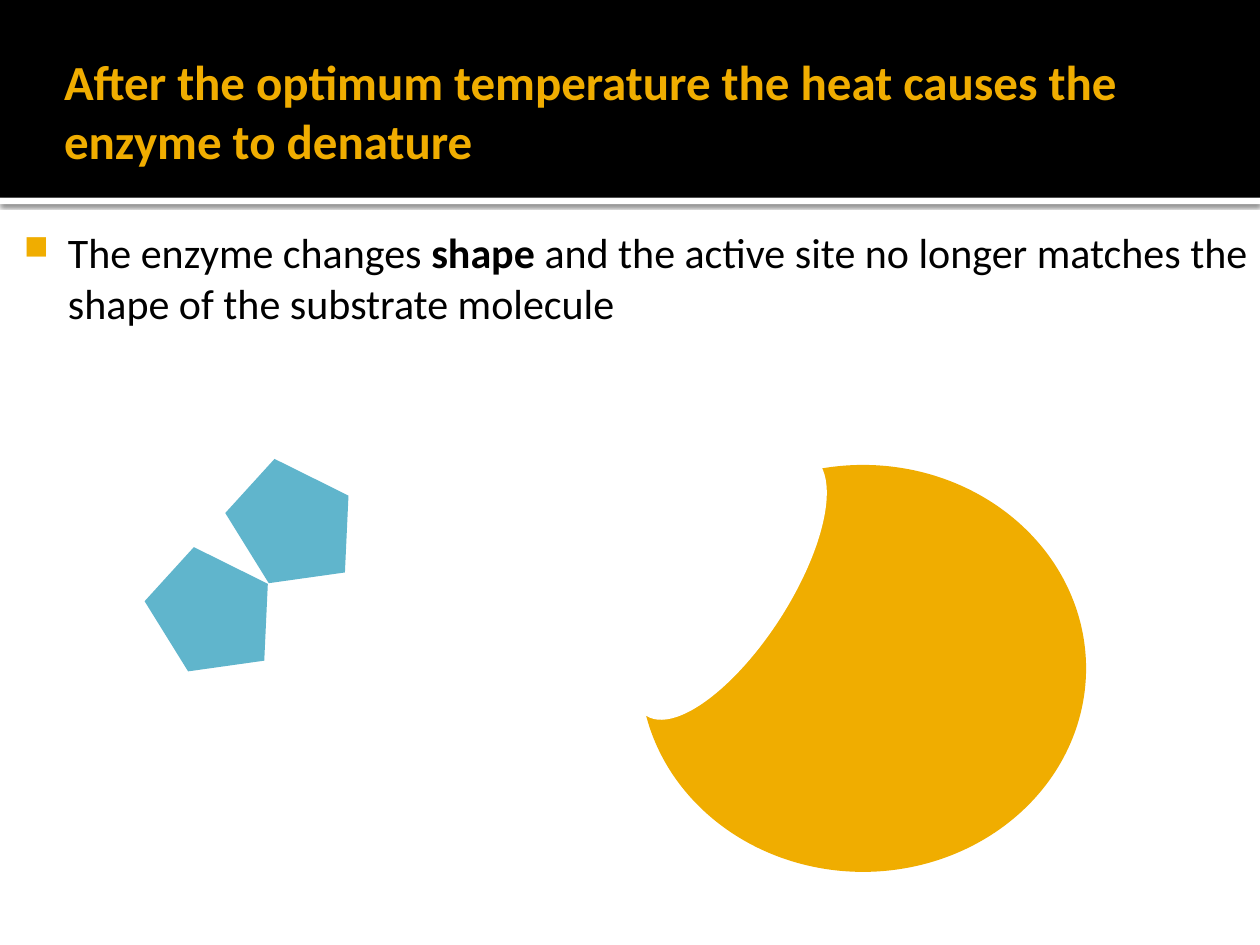
from lxml import etree
from pptx import Presentation
from pptx.dml.color import RGBColor
from pptx.enum.shapes import MSO_SHAPE as Shape
from pptx.enum.text import MSO_AUTO_SIZE as AutoSize
from pptx.oxml.ns import qn
from pptx.util import Inches, Pt

BLACK, WHITE, AMBER, BLUE = "000000", "FFFFFF", "F0AD00", "60B5CC"


def rgb(value):
    return RGBColor.from_string(value)


class SlideBuilder:
    font_name = "Calibri"

    def __init__(self, slide):
        self.slide = slide

    def shape(self, kind, left, top, width, height, color, rotation=0, parent=None):
        shapes = (parent or self.slide).shapes
        item = shapes.add_shape(kind, *map(Inches, (left, top, width, height)))
        item.shadow.inherit = False
        item.fill.solid()
        item.fill.fore_color.rgb = rgb(color)
        item.line.fill.background()
        item.rotation = rotation
        return item

    def pentagon_pair(self, left, top, color):
        """Two touching pentagons; left and top belong to the upper one."""
        pair = self.slide.shapes.add_group_shape()
        for step in range(2):
            self.shape(Shape.REGULAR_PENTAGON, left - 0.64 * step, top + 0.7 * step,
                       0.94, 1.02, color, 132.3, pair)

    def drop_shadow(self, item):
        effects = item._element.spPr.find(qn("a:effectLst"))
        shadow = etree.SubElement(effects, qn("a:outerShdw"), blurRad=str(Pt(2.5)),
                                  dist=str(Pt(0.8)), dir="5400000", rotWithShape="0")
        color = etree.SubElement(shadow, qn("a:srgbClr"), val=BLACK)
        etree.SubElement(color, qn("a:alpha"), val="60000")

    def text(self, left, top, width, height, runs, size, color,
             insets=(0.1, 0.05, 0.1, 0.05), auto_size=AutoSize.NONE):
        """Runs are (wording, bold) pairs of one paragraph."""
        box = self.slide.shapes.add_textbox(*map(Inches, (left, top, width, height)))
        frame = box.text_frame
        frame.word_wrap = True
        frame.auto_size = auto_size
        (frame.margin_left, frame.margin_top,
         frame.margin_right, frame.margin_bottom) = map(Inches, insets)
        paragraph = frame.paragraphs[0]
        paragraph.font.name = self.font_name
        paragraph.font.size = Pt(size)
        paragraph.font.color.rgb = rgb(color)
        for wording, bold in runs:
            run = paragraph.add_run()
            run.text = wording
            run.font.bold = bold
        return paragraph

    def bullet(self, paragraph, color):
        properties = paragraph._p.get_or_add_pPr()
        properties.set("marL", str(Inches(0.48)))
        properties.set("indent", str(Inches(-0.35)))
        marks = [etree.Element(qn("a:buClr")),
                 etree.Element(qn("a:buSzPct"), val="80000"),
                 etree.Element(qn("a:buChar"), char="■")]
        etree.SubElement(marks[0], qn("a:srgbClr"), val=color)
        for position, mark in enumerate(marks):
            properties.insert(position, mark)


def main():
    deck = Presentation()
    deck.slide_width, deck.slide_height = Inches(10), Inches(7.5)
    page = SlideBuilder(deck.slides.add_slide(deck.slide_layouts[6]))

    # Header band
    band_edge = page.shape(Shape.RECTANGLE, 0, 1.57, 10, 0.05, WHITE)
    page.drop_shadow(band_edge)
    page.shape(Shape.RECTANGLE, 0, 0, 10, 1.57, BLACK)

    # Enzyme with its original active site cut out
    page.shape(Shape.OVAL, 5.08, 3.69, 3.54, 3.23, AMBER)
    page.pentagon_pair(5.44, 3.36, WHITE)
    page.shape(Shape.RECTANGLE, 5.08, 3.83, 0.63, 0.63, WHITE, 41.5)

    # Title
    page.text(0.41, 0.36, 9.39, 1.03,
              [("After the optimum temperature the heat causes the enzyme to denature", True)],
              28, AMBER, auto_size=AutoSize.SHAPE_TO_FIT_TEXT)

    # Denatured active site
    page.shape(Shape.OVAL, 4.57, 4.18, 2.44, 0.95, WHITE, 302.8)

    # Substrate molecule
    page.pentagon_pair(1.89, 3.69, BLUE)

    # Explanation
    explanation = page.text(
        0, 1.7, 10, 1.26,
        [("The enzyme changes ", False), ("shape", True),
         (" and the active site no longer matches the shape of the substrate molecule", False)],
        24, BLACK, insets=(0.06, 0.1, 0.08, 0.05))
    page.bullet(explanation, AMBER)

    deck.save("out.pptx")


if __name__ == "__main__":
    main()
